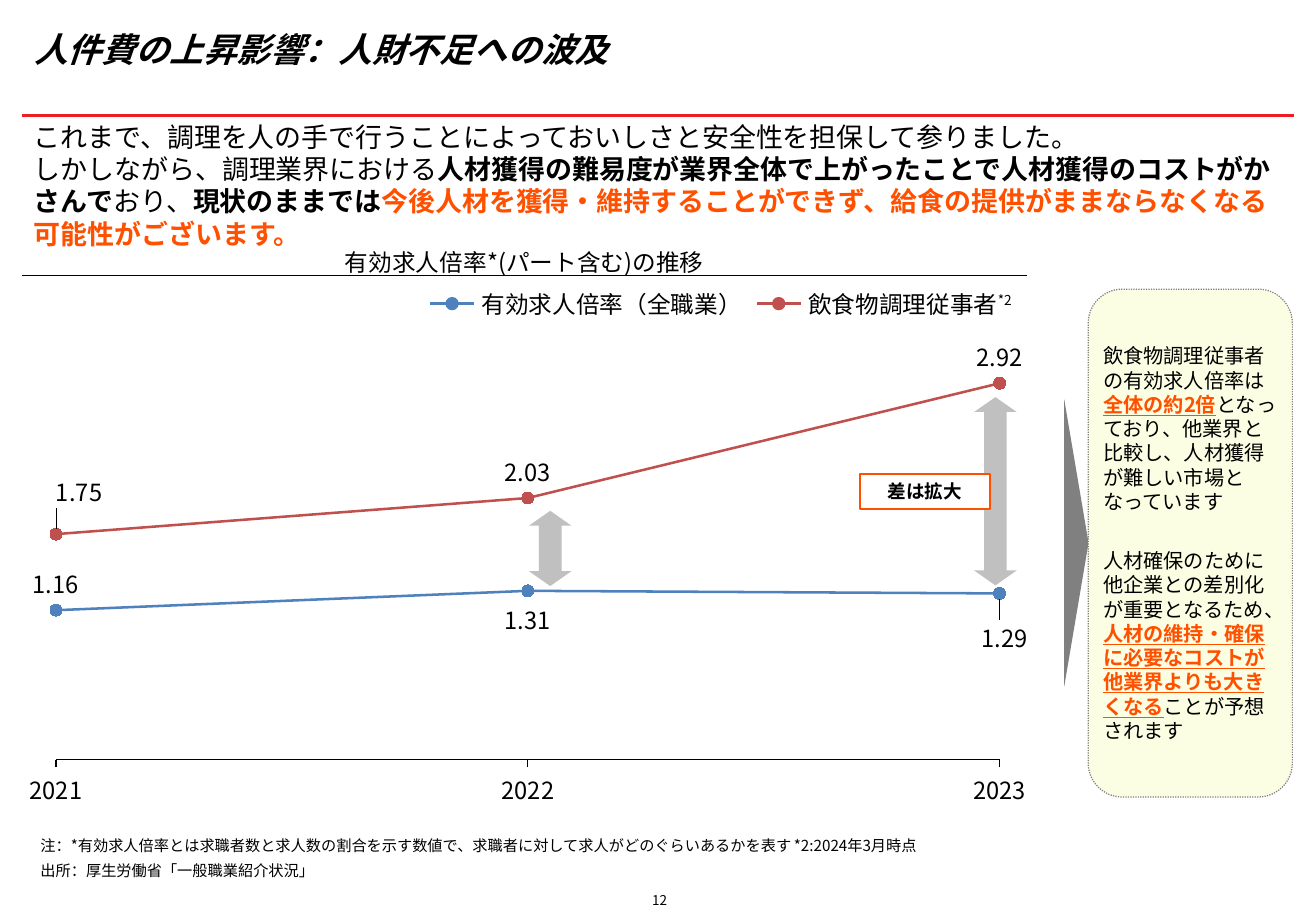
from lxml.etree import SubElement
from pptx import Presentation
from pptx.chart.data import XyChartData
from pptx.dml.color import RGBColor
from pptx.enum.chart import XL_CHART_TYPE as ChartType, XL_LABEL_POSITION as LabelPosition
from pptx.enum.chart import XL_MARKER_STYLE as Marker, XL_TICK_MARK as Tick
from pptx.enum.dml import MSO_LINE as Dash
from pptx.enum.shapes import MSO_CONNECTOR as Connector, MSO_SHAPE as Shape
from pptx.enum.text import MSO_ANCHOR as Anchor, PP_ALIGN as Align
from pptx.oxml import parse_xml
from pptx.oxml.ns import qn
from pptx.util import Pt

BLACK = RGBColor(0x00, 0x00, 0x00)
WHITE = RGBColor(0xFF, 0xFF, 0xFF)
RED = RGBColor(0xEE, 0x1C, 0x23)
ORANGE = RGBColor(0xFF, 0x50, 0x00)
BLUE = RGBColor(0x4F, 0x81, 0xBD)
BRICK = RGBColor(0xC0, 0x50, 0x4D)
GRAY = RGBColor(0x80, 0x80, 0x80)
SILVER = RGBColor(0xC0, 0xC0, 0xC0)
CREAM = RGBColor(0xFC, 0xFE, 0xE3)
FONT = "Noto Sans CJK JP"
CHART_NS = "http://schemas.openxmlformats.org/drawingml/2006/chart"
LEADER_LINES = (
    f'<c:extLst xmlns:c="{CHART_NS}"><c:ext uri="{{CE6537A1-D6FC-4f65-9D91-7224C49458BB}}" '
    'xmlns:c15="http://schemas.microsoft.com/office/drawing/2012/chart">'
    '<c15:showLeaderLines val="1"/></c:ext></c:extLst>'
)

YEARS = (2021, 2022, 2023)
ABOVE, BELOW = LabelPosition.ABOVE, LabelPosition.BELOW
SERIES = (
    ("有効求人倍率（全職業）", BLUE, (1.16, 1.31, 1.29), (ABOVE, BELOW, BELOW), {2: (0.005, 0.03)}),
    ("飲食物調理従事者", BRICK, (1.75, 2.03, 2.92), (ABOVE, ABOVE, ABOVE), {0: (0.022, -0.03)}),
)


class SlideBuilder:
    """Draw styled elements on one slide, with lengths in points."""

    def __init__(self, presentation):
        self.slide = presentation.slides.add_slide(presentation.slide_layouts[5])
        self.shapes = self.slide.shapes

    def style_font(self, font, size, color=BLACK, bold=False):
        font.name, font.size, font.bold = FONT, Pt(size), bold
        font.color.rgb = color
        SubElement(font._element, qn("a:ea")).set("typeface", FONT)

    def fill_text(self, shape, paragraphs, size, align=Align.LEFT, anchor=Anchor.MIDDLE,
                  insets=(0, 0), bold=False, gap=0):
        frame = shape.text_frame
        frame.word_wrap = True
        frame.vertical_anchor = anchor
        frame.margin_left = frame.margin_right = Pt(insets[0])
        frame.margin_top = frame.margin_bottom = Pt(insets[1])
        for index, runs in enumerate(paragraphs):
            paragraph = frame.add_paragraph() if index else frame.paragraphs[0]
            paragraph.alignment = align
            paragraph.line_spacing = Pt(round(size * 1.2, 1))
            paragraph.space_before = Pt(gap if index else 0)
            self.style_font(paragraph.font, size, bold=bold)
            for text, *marks in runs:
                if text == "\n":
                    paragraph.add_line_break()
                    continue
                run = paragraph.add_run()
                run.text = text
                if "bold" in marks:
                    run.font.bold = True
                if "underline" in marks:
                    run.font.underline = True
                if "orange" in marks:
                    run.font.color.rgb = ORANGE
                if "superscript" in marks:
                    run.font._element.set("baseline", "30000")

    def title(self, text, left, top, width, height, size):
        title = self.shapes.title
        title.left, title.top, title.width, title.height = map(Pt, (left, top, width, height))
        self.fill_text(title, [[(text,)]], size, insets=(7.2, 0), bold=True)
        title.text_frame.paragraphs[0].font.italic = True

    def text(self, paragraphs, left, top, width, height, size, **layout):
        box = self.shapes.add_textbox(*map(Pt, (left, top, width, height)))
        self.fill_text(box, paragraphs, size, **layout)

    def line(self, left, right, y, color, weight):
        line = self.shapes.add_connector(Connector.STRAIGHT, *map(Pt, (left, y, right, y)))
        line.line.color.rgb, line.line.width = color, Pt(weight)
        SubElement(line._element.spPr, qn("a:effectLst"))

    def shape(self, kind, left, top, width, height, fill, outline=None, weight=0.75,
              rotation=0, adjustments=()):
        shape = self.shapes.add_shape(kind, *map(Pt, (left, top, width, height)))
        shape.shadow.inherit = False
        shape.rotation = rotation
        for index, value in enumerate(adjustments):
            shape.adjustments[index] = value
        shape.fill.solid()
        shape.fill.fore_color.rgb = fill
        if outline is None:
            shape.line.fill.background()
        else:
            shape.line.color.rgb, shape.line.width = outline, Pt(weight)
        return shape

    def manual_layout(self, parent, index, **values):
        layout = parent.makeelement(qn("c:layout"))
        manual = SubElement(layout, qn("c:manualLayout"))
        for name, value in values.items():
            SubElement(manual, qn(f"c:{name}")).set("val", str(value))
        parent.insert(index, layout)

    def chart(self, left, top, width, height):
        data = XyChartData()
        for name, _, ratios, _, _ in SERIES:
            series = data.add_series(name)
            for year, ratio in zip(YEARS, ratios):
                series.add_data_point(year, ratio)
        chart = self.shapes.add_chart(
            ChartType.XY_SCATTER_LINES, *map(Pt, (left, top, width, height)), data).chart
        chart.has_legend = chart.has_title = False
        self.style_font(chart.font, 14)
        years, ratios = chart.category_axis, chart.value_axis
        years.minimum_scale, years.maximum_scale, years.major_unit = YEARS[0], YEARS[-1], 1
        years.major_tick_mark, years.minor_tick_mark = Tick.OUTSIDE, Tick.NONE
        years.tick_labels.number_format = "0"
        years.tick_labels.number_format_is_linked = False
        years.format.line.color.rgb, years.format.line.width = BLACK, Pt(0.75)
        ratios.minimum_scale, ratios.maximum_scale = 0, 2.92
        ratios.visible = False
        years.has_major_gridlines = ratios.has_major_gridlines = False
        plot_area = chart._chartSpace.chart.plotArea
        for old in plot_area.findall(qn("c:layout")):
            plot_area.remove(old)
        self.manual_layout(plot_area, 0, layoutTarget="inner", xMode="edge", yMode="edge",
                           x=0.053, y=0.134, w=0.893, h=0.735)
        plot = chart.plots[0]
        plot.vary_by_categories = False
        for series, (_, color, _, positions, offsets) in zip(plot.series, SERIES):
            self.chart_series(series, color, positions, offsets)

    def chart_series(self, series, color, positions, offsets):
        series.smooth = False
        series.format.line.color.rgb, series.format.line.width = color, Pt(1.5)
        series.marker.style, series.marker.size = Marker.CIRCLE, 7
        series.marker.format.fill.solid()
        series.marker.format.fill.fore_color.rgb = color
        series.marker.format.line.color.rgb = color
        for index, position in enumerate(positions):
            label = series.points[index].data_label
            self.style_font(label.font, 14)
            label.position = position
        labels = series._element.find(qn("c:dLbls"))
        for index, (x, y) in offsets.items():
            self.manual_layout(labels.findall(qn("c:dLbl"))[index], 1, x=x, y=y)
        labels.append(parse_xml(LEADER_LINES))


def main():
    presentation = Presentation()
    presentation.slide_width, presentation.slide_height = Pt(780), Pt(540)
    builder = SlideBuilder(presentation)

    builder.line(13, 767, 68.4, RED, 1.5)
    builder.title("人件費の上昇影響：人財不足への波及", 13, 16, 754, 26, 20)
    builder.text([[
        ("これまで、調理を人の手で行うことによっておいしさと安全性を担保して参りました。",),
        ("\n",),
        ("しかしながら、調理業界における",),
        ("人材獲得の難易度が業界全体で上がったことで人材獲得のコストがかさんで", "bold"),
        ("おり、",),
        ("現状のままでは", "bold"),
        ("今後人材を獲得・維持することができず、給食の提供がままならなくなる可能性がございます。",
         "bold", "orange"),
    ]], 13, 68.4, 754, 76, 16, anchor=Anchor.TOP, insets=(7.2, 2.9))
    builder.text([[("有効求人倍率*(パート含む)の推移",)]], 13, 139, 595.5, 24.5, 14,
                 align=Align.CENTER, anchor=Anchor.BOTTOM)
    builder.line(13, 608.5, 163.5, BLACK, 0.5)

    builder.chart(0, 186.5, 626.4, 303.8)
    footnotes = ((), (("*2", "superscript"),))
    for left, (name, color, *_), footnote in zip((255, 448.6), SERIES, footnotes):
        builder.line(left, left + 26, 180, color, 1.5)
        builder.shape(Shape.OVAL, left + 9.4, 176.4, 7.2, 7.2, color, color)
        builder.text([[(name,), *footnote]], left + 30.5, 172, 160, 16, 14)

    for left, top, width in ((303.8, 312.5, 44.6), (534.2, 278.6, 111.6)):
        builder.shape(Shape.LEFT_RIGHT_ARROW, left, top, width, 25.2, SILVER,
                      rotation=90, adjustments=(0.53, 0.35))
    gap_label = builder.shape(Shape.RECTANGLE, 509.8, 280.8, 77, 20.9, WHITE, ORANGE, 1)
    builder.fill_text(gap_label, [[("差は拡大",)]], 11, align=Align.CENTER, bold=True)

    builder.shape(Shape.ISOSCELES_TRIANGLE, 553, 314.6, 170, 14.4, GRAY, rotation=90)
    card = builder.shape(Shape.ROUNDED_RECTANGLE, 645, 171.4, 121, 301, CREAM, GRAY)
    card.line.dash_style = Dash.ROUND_DOT
    builder.fill_text(card, [
        [("飲食物調理従事者の有効求人倍率は",),
         ("全体の約2倍", "bold", "underline", "orange"),
         ("となっており、他業界と比較し、人材獲得が難しい市場となっています",)],
        [("人材確保のために他企業との差別化が重要となるため、",),
         ("人材の維持・確保に必要なコストが他業界よりも大きくなる", "bold", "underline", "orange"),
         ("ことが予想されます",)],
    ], 12, insets=(2.9, 0), gap=20.5)

    notes = ("注：*有効求人倍率とは求職者数と求人数の割合を示す数値で、"
             "求職者に対して求人がどのぐらいあるかを表す *2:2024年3月時点",
             "出所：厚生労働省「一般職業紹介状況」")
    for index, note in enumerate(notes):
        builder.text([[(note,)]], 24, 495.4 + 15 * index, 731.5, 11, 9)
    builder.text([[("12",)]], 303, 519, 176, 29, 8, align=Align.CENTER)
    presentation.save("out.pptx")


if __name__ == "__main__":
    main()
